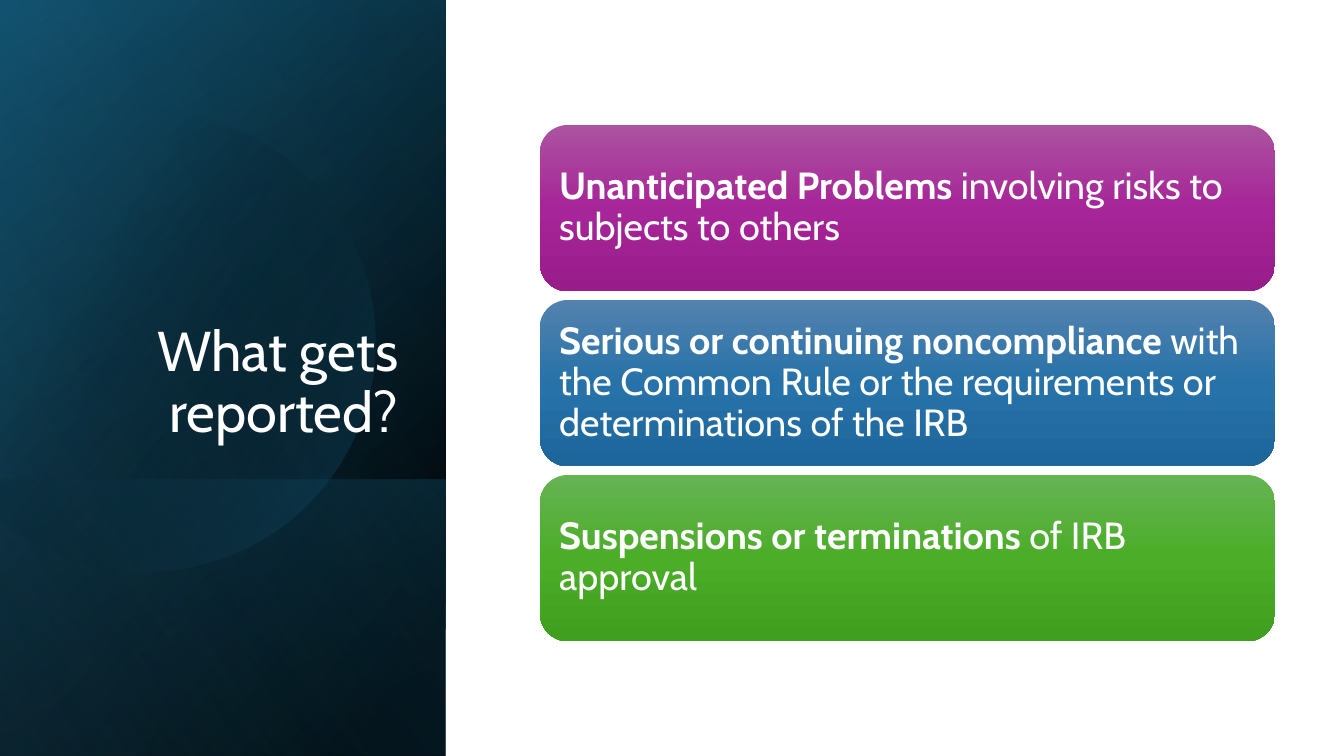
import math
from dataclasses import dataclass

from lxml import etree
from pptx import Presentation
from pptx.dml.color import RGBColor
from pptx.enum import shapes, text
from pptx.oxml import ns
from pptx.util import Cm, Pt

FONT = "Cabin"
WHITE = "FFFFFF"
PANEL_W, SLIDE_W, SLIDE_H = 11.23, 33.87, 19.05


@dataclass
class Stop:
    pos: int
    color: str
    opacity: int = 100


@dataclass
class Layer:
    """A full-width band of the left panel, reaching down to the slide's bottom."""
    top: float
    angle: int
    stops: list[Stop]


@dataclass
class Card:
    lead: str
    rest: str
    colors: tuple[str, str, str]


BASE_LAYERS = [
    Layer(0, 50, [Stop(8, "000000"), Stop(100, "104862")]),
    Layer(0, 30, [Stop(0, "000000", 0), Stop(99, "156082", 46)]),
    Layer(12.09, 130, [Stop(2, "156082", 29), Stop(100, "000000", 30)]),
]
GLOW = Layer(0, 120, [Stop(0, "000000", 0), Stop(99, "46B1E1", 11)])
DISC_STOPS = [Stop(29, "000000", 0), Stop(100, "156082", 43)]
CARDS = [
    Card("Unanticipated Problems ", "involving risks to subjects to others",
         ("AC53A0", "A62598", "991C8B")),
    Card("Serious or continuing noncompliance ",
         "with the Common Rule or the requirements or determinations of the IRB",
         ("5382AF", "2772A9", "1D669C")),
    Card("Suspensions or terminations ", "of IRB approval",
         ("66B354", "4BAD28", "409F1E")),
]


def set_attrs(obj, values: dict) -> None:
    for name, value in values.items():
        setattr(obj, name, value)


def paint(sp, stops: list[Stop], angle: int) -> None:
    """Give a shape a linear gradient, without line or shadow."""
    sp.shadow.inherit = False
    sp.fill.background()
    blank = sp.element.find(".//" + ns.qn("a:noFill"))
    grad = etree.Element(ns.qn("a:gradFill"), rotWithShape="1")
    gs_list = etree.SubElement(grad, ns.qn("a:gsLst"))
    for stop in stops:
        gs = etree.SubElement(gs_list, ns.qn("a:gs"), pos=str(stop.pos * 1000))
        clr = etree.SubElement(gs, ns.qn("a:srgbClr"), val=stop.color)
        if stop.opacity < 100:
            etree.SubElement(clr, ns.qn("a:alpha"), val=str(stop.opacity * 1000))
    etree.SubElement(grad, ns.qn("a:lin"), ang=str(angle * 60000), scaled="0")
    blank.getparent().replace(blank, grad)
    sp.line.fill.background()


def add_layer(s, layer: Layer) -> None:
    """Draw a layer as a mirrored rectangle turned by 90 degrees."""
    height = SLIDE_H - layer.top
    left = (PANEL_W - height) / 2
    top = layer.top + (height - PANEL_W) / 2
    sp = s.shapes.add_shape(shapes.MSO_SHAPE.RECTANGLE,
                            Cm(left), Cm(top), Cm(height), Cm(PANEL_W))
    sp.rotation = 90
    sp.element.find(".//" + ns.qn("a:xfrm")).set("flipH", "1")
    paint(sp, layer.stops, layer.angle)


def add_disc(s, cx: float, cy: float, radius: float) -> None:
    """Draw a circle cut off by the slide's left edge."""
    limit = math.acos(-cx / radius)
    steps = 120
    angles = [limit * (2 * i / steps - 1) for i in range(steps + 1)]
    points = [(Cm(cx + radius * math.cos(a)), Cm(cy + radius * math.sin(a)))
              for a in angles]
    builder = s.shapes.build_freeform(*points[0])
    builder.add_line_segments(points[1:], close=True)
    paint(builder.convert_to_shape(), DISC_STOPS, 30)


def add_run(p, content: str, size: int, bold: bool = False) -> None:
    r = p.add_run()
    r.text = content
    set_attrs(r.font, {"name": FONT, "size": Pt(size), "bold": bold})
    r.font.color.rgb = RGBColor.from_string(WHITE)


def add_title(s, content: str) -> None:
    title = s.shapes.title
    set_attrs(title, {"left": Cm(1.63), "top": Cm(4.67),
                      "width": Cm(8.66), "height": Cm(6.65)})
    set_attrs(title.text_frame, {"vertical_anchor": text.MSO_ANCHOR.BOTTOM,
                                 "word_wrap": True,
                                 "auto_size": text.MSO_AUTO_SIZE.NONE})
    p = title.text_frame.paragraphs[0]
    set_attrs(p, {"alignment": text.PP_ALIGN.RIGHT, "line_spacing": 0.9})
    add_run(p, content, 40)
    # Bring the title in front of the panel layers
    title.element.getparent().append(title.element)


def add_card(s, card: Card, top: float) -> None:
    sp = s.shapes.add_shape(shapes.MSO_SHAPE.ROUNDED_RECTANGLE,
                            Cm(13.61), Cm(top), Cm(18.52), Cm(4.19))
    paint(sp, [Stop(pos, c) for pos, c in zip((0, 50, 100), card.colors)], 90)
    tf = sp.text_frame
    inset = Cm(0.28)
    set_attrs(tf, {"word_wrap": True, "vertical_anchor": text.MSO_ANCHOR.MIDDLE,
                   "margin_left": inset, "margin_right": inset,
                   "margin_top": inset, "margin_bottom": inset})
    p = tf.paragraphs[0]
    set_attrs(p, {"alignment": text.PP_ALIGN.LEFT, "line_spacing": 0.9})
    add_run(p, card.lead, 27, bold=True)
    add_run(p, card.rest, 27)


def main() -> None:
    prs = Presentation()
    set_attrs(prs, {"slide_width": Cm(SLIDE_W), "slide_height": Cm(SLIDE_H)})
    s = prs.slides.add_slide(prs.slide_layouts.get_by_name("Title Only"))
    for layer in BASE_LAYERS:
        add_layer(s, layer)
    add_disc(s, 3.66, 8.6, 5.8)
    add_layer(s, GLOW)
    add_title(s, "What gets reported?")
    for i, card in enumerate(CARDS):
        add_card(s, card, 3.15 + 4.41 * i)
    prs.save("out.pptx")


if __name__ == "__main__":
    main()
